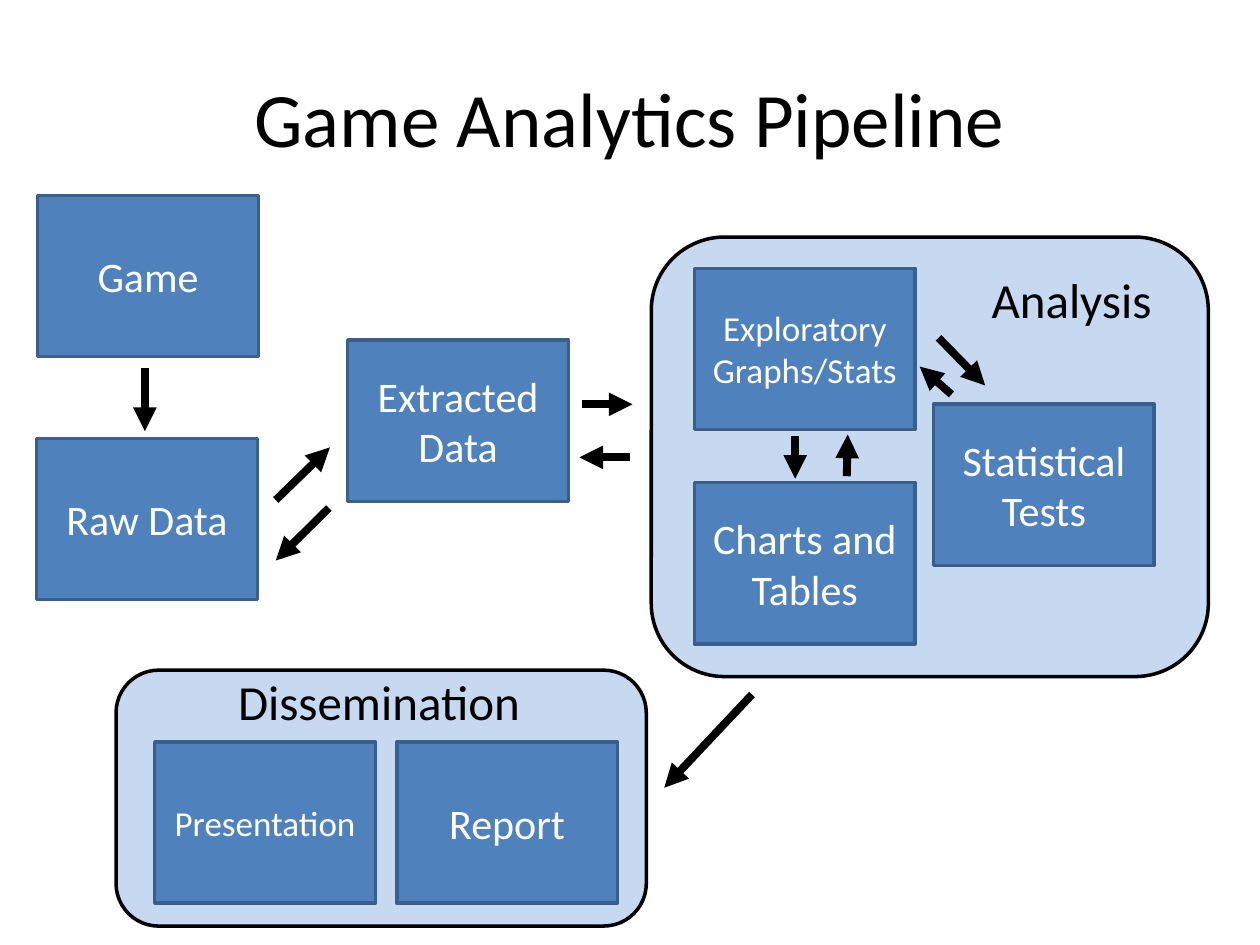
"""Build the game analytics pipeline slide."""
from lxml import etree
from pptx import Presentation
from pptx import util as u
from pptx.dml.color import RGBColor
from pptx.enum import shapes, text
from pptx.oxml import ns

BLACK = RGBColor(0x00, 0x00, 0x00)
WHITE = RGBColor(0xFF, 0xFF, 0xFF)
BLUE = RGBColor(0x4F, 0x81, 0xBD)
DARK_BLUE = RGBColor(0x3A, 0x5F, 0x8C)
PALE_BLUE = RGBColor(0xC6, 0xD9, 0xF1)

PANELS = [(13.13, 4.78, 11.23, 8.86), (2.34, 13.51, 10.69, 5.16)]
LABELS = [("Analysis", 19.74, 5.31, 3.78), ("Dissemination", 4.55, 13.41, 6.27)]
STEPS = [
    ("Game", 0.76, 3.94, 24),
    ("Raw Data", 0.74, 8.84, 24),
    ("Extracted Data", 7.01, 6.86, 24),
    ("Exploratory Graphs/Stats", 14, 5.41, 20),
    ("Charts and Tables", 14, 9.73, 24),
    ("Statistical Tests", 18.82, 8.15, 24),
    ("Presentation", 3.12, 14.96, 20),
    ("Report", 8, 14.96, 24),
]
ARROWS = [
    (2.92, 7.42, 2.92, 8.69),
    (5.56, 10.08, 6.65, 9.02),
    (6.63, 10.24, 5.56, 11.3),
    (11.73, 8.15, 12.75, 8.15),
    (12.7, 9.22, 11.68, 9.22),
    (18.92, 6.81, 19.86, 7.77),
    (19.18, 7.95, 18.54, 7.39),
    (16.03, 8.79, 16.03, 9.65),
    (17.07, 9.6, 17.09, 8.76),
    (15.16, 14, 13.39, 15.88),
]


class PipelineSlide:
    """Hold the slide and its shared style."""

    font = "Calibri"
    box_width, box_height = 4.45, 3.25

    def __init__(self, slide):
        self.slide = slide

    def add_words(self, shape, words, size, color, align=None):
        paragraph = shape.text_frame.paragraphs[0]
        paragraph.alignment = align
        run = paragraph.add_run()
        run.text = words
        run.font.name = self.font
        run.font.size = u.Pt(size)
        run.font.color.rgb = color

    def title(self, words):
        shape = self.slide.shapes.title
        shape.left, shape.top = u.Cm(1.27), u.Cm(0.76)
        shape.width, shape.height = u.Cm(22.86), u.Cm(3.18)
        shape.text_frame.vertical_anchor = text.MSO_ANCHOR.MIDDLE
        self.add_words(shape, words, 44, BLACK, text.PP_ALIGN.CENTER)

    def block(self, kind, bounds, fill, line):
        shape = self.slide.shapes.add_shape(kind, *map(u.Cm, bounds))
        shape.shadow.inherit = False
        shape.fill.solid()
        shape.fill.fore_color.rgb = fill
        shape.line.color.rgb = line
        shape.line.width = u.Pt(2)
        return shape

    def panel(self, *bounds):
        self.block(shapes.MSO_SHAPE.ROUNDED_RECTANGLE, bounds, PALE_BLUE, BLACK)

    def step(self, words, left, top, size):
        bounds = (left, top, self.box_width, self.box_height)
        shape = self.block(shapes.MSO_SHAPE.RECTANGLE, bounds, BLUE, DARK_BLUE)
        shape.text_frame.word_wrap = True
        shape.text_frame.vertical_anchor = text.MSO_ANCHOR.MIDDLE
        self.add_words(shape, words, size, WHITE, text.PP_ALIGN.CENTER)

    def label(self, words, left, top, width):
        shape = self.slide.shapes.add_textbox(*map(u.Cm, (left, top, width, 1.45)))
        shape.text_frame.word_wrap = False
        shape.text_frame.auto_size = text.MSO_AUTO_SIZE.SHAPE_TO_FIT_TEXT
        self.add_words(shape, words, 28, BLACK)

    def arrow(self, *ends):
        connector = self.slide.shapes.add_connector(
            shapes.MSO_CONNECTOR.STRAIGHT, *map(u.Cm, ends))
        connector.line.color.rgb = BLACK
        connector.line.width = u.Pt(4.5)
        properties = connector.element.spPr
        outline = properties.find(ns.qn("a:ln"))
        etree.SubElement(outline, ns.qn("a:tailEnd"), type="triangle")
        etree.SubElement(properties, ns.qn("a:effectLst"))


def main():
    presentation = Presentation()
    presentation.slide_width, presentation.slide_height = u.Cm(25.4), u.Cm(19.05)
    layout = presentation.slide_layouts.get_by_name("Title Only")
    pipeline = PipelineSlide(presentation.slides.add_slide(layout))
    pipeline.title("Game Analytics Pipeline")
    for draw, items in (
        (pipeline.panel, PANELS),
        (pipeline.label, LABELS),
        (pipeline.step, STEPS),
        (pipeline.arrow, ARROWS),
    ):
        for item in items:
            draw(*item)
    presentation.save("out.pptx")


if __name__ == "__main__":
    main()
